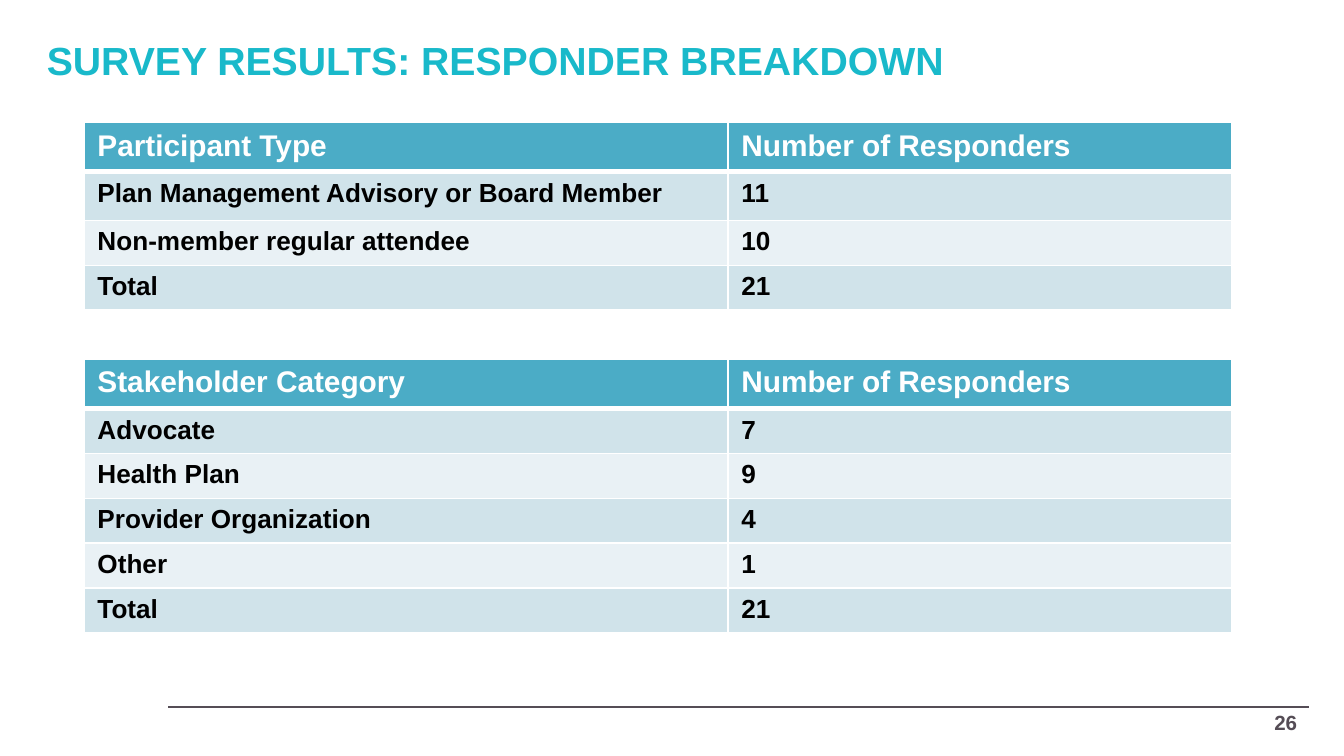
from lxml import etree
from pptx import Presentation
from pptx.dml.color import RGBColor
from pptx.enum import shapes, text
from pptx.oxml import ns
from pptx.util import Pt

COLORS = {
    "title": "19B9CA", "footer": "554D56", "header": "4BACC6",
    "band_dark": "D0E3EA", "band_light": "E9F1F5",
    "white": "FFFFFF", "black": "000000",
}
COLUMN_WIDTHS = (345, 270)
TABLE_LEFT = 45
PARTICIPANTS = [
    ("Participant Type", "Number of Responders"),
    ("Plan Management Advisory or Board Member", "11"),
    ("Non-member regular attendee", "10"),
    ("Total", "21"),
]
STAKEHOLDERS = [
    ("Stakeholder Category", "Number of Responders"),
    ("Advocate", "7"),
    ("Health Plan", "9"),
    ("Provider Organization", "4"),
    ("Other", "1"),
    ("Total", "21"),
]


def color(name):
    return RGBColor.from_string(COLORS[name])


def style_font(paragraph, size, color_name):
    font = paragraph.font
    font.name = "Arial"
    font.size = Pt(size)
    font.bold = True
    font.color.rgb = color(color_name)


def add_label(slide, words, box, size, color_name,
              align=text.PP_ALIGN.LEFT, anchor=text.MSO_ANCHOR.TOP):
    frame = slide.shapes.add_textbox(*map(Pt, box)).text_frame
    frame.word_wrap = True
    frame.vertical_anchor = anchor
    paragraph = frame.paragraphs[0]
    paragraph.text = words
    paragraph.alignment = align
    style_font(paragraph, size, color_name)


def add_footer_rule(slide):
    rule = slide.shapes.add_connector(
        shapes.MSO_CONNECTOR.STRAIGHT, Pt(90), Pt(378.7), Pt(701.3), Pt(378.7))
    rule.line.color.rgb = color("footer")
    rule.line.width = Pt(1)
    etree.SubElement(rule._element.spPr, ns.qn("a:effectLst"))


def set_borders(cell, top, bottom):
    """Draw white cell edges; top and bottom are widths in points."""
    properties = cell._tc.get_or_add_tcPr()
    widths = {"lnL": 1, "lnR": 1, "lnT": top, "lnB": bottom}
    for position, (edge, width) in enumerate(widths.items()):
        line = etree.Element(ns.qn(f"a:{edge}"), w=str(Pt(width)))
        fill = etree.SubElement(line, ns.qn("a:solidFill"))
        etree.SubElement(fill, ns.qn("a:srgbClr"), val=COLORS["white"])
        properties.insert(position, line)


def add_count_table(slide, entries, top, row_heights):
    table = slide.shapes.add_table(
        len(entries), len(COLUMN_WIDTHS), Pt(TABLE_LEFT), Pt(top),
        Pt(sum(COLUMN_WIDTHS)), Pt(sum(row_heights))).table
    for column, width in zip(table.columns, COLUMN_WIDTHS):
        column.width = Pt(width)
    for index, (entry, height) in enumerate(zip(entries, row_heights)):
        table.rows[index].height = Pt(height)
        is_header = index == 0
        band = "band_dark" if index % 2 else "band_light"
        for cell, words in zip(table.rows[index].cells, entry):
            cell.fill.solid()
            cell.fill.fore_color.rgb = color("header" if is_header else band)
            set_borders(cell, top=3 if index == 1 else 1,
                        bottom=3 if is_header else 1)
            paragraph = cell.text_frame.paragraphs[0]
            paragraph.text = words
            style_font(paragraph, 16 if is_header else 14,
                       "white" if is_header else "black")


def main():
    deck = Presentation()
    deck.slide_width, deck.slide_height = Pt(720), Pt(405)
    slide = deck.slides.add_slide(deck.slide_layouts[6])
    add_footer_rule(slide)
    add_label(slide, "SURVEY RESULTS: RESPONDER BREAKDOWN",
              (18, 16, 684, 50), 21, "title")
    add_label(slide, "26", (644.5, 376, 57.5, 21.5), 11, "footer",
              text.PP_ALIGN.RIGHT, text.MSO_ANCHOR.MIDDLE)
    add_count_table(slide, PARTICIPANTS, 65.7, [18.7, 26, 18.7, 18.7])
    add_count_table(slide, STAKEHOLDERS, 192.5, [21.6] + [23.7] * 5)
    deck.save("out.pptx")


if __name__ == "__main__":
    main()
